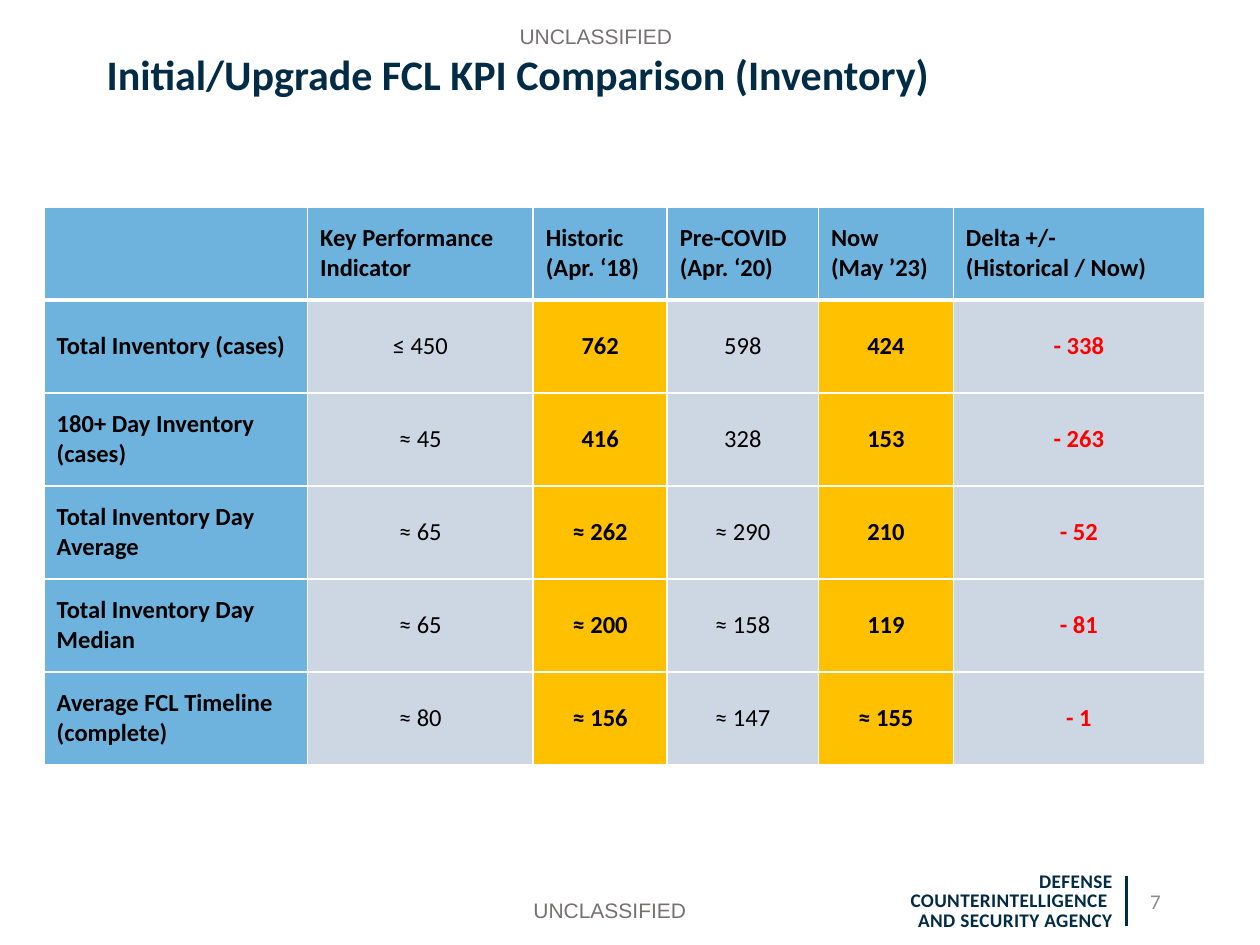
from dataclasses import dataclass

from lxml.etree import SubElement
from pptx import Presentation
from pptx.dml.color import RGBColor
from pptx.enum.shapes import MSO_CONNECTOR
from pptx.enum.text import MSO_ANCHOR, PP_ALIGN
from pptx.oxml.ns import qn
from pptx.util import Cm, Pt

TITLE = "Initial/Upgrade FCL KPI Comparison (Inventory)"
MARKING = "UNCLASSIFIED"
AGENCY = "DEFENSE COUNTERINTELLIGENCE \vAND SECURITY AGENCY"
PAGE_NUMBER = "7"

HEADER = ["", "Key Performance Indicator", "Historic\n(Apr. ‘18)", "Pre-COVID (Apr. ‘20)",
          "Now\n(May ’23)", "Delta +/-\n(Historical / Now)"]
ROWS = [
    ["Total Inventory (cases)", "≤ 450", "762", "598", "424", "- 338"],
    ["180+ Day Inventory (cases)", "≈ 45", "416", "328", "153", "- 263"],
    ["Total Inventory Day Average", "≈ 65", "≈ 262", "≈ 290", "210", "- 52"],
    ["Total Inventory Day Median", "≈ 65", "≈ 200", "≈ 158", "119", "- 81"],
    ["Average FCL Timeline (complete)", "≈ 80", "≈ 156", "≈ 147", "≈ 155", "- 1"],
]
COLUMN_WIDTHS = [5.31, 4.55, 2.7, 3.05, 2.72, 5.06]
ROW_HEIGHT = 1.875
HIGHLIGHT_COLUMNS = (2, 4)
DELTA_COLUMN = 5


@dataclass(frozen=True)
class Theme:
    font: str = "Calibri"
    marking_font: str = "Arial"
    navy: str = "022B46"
    blue: str = "6DB3DE"
    pale: str = "CDD7E3"
    gold: str = "FFC000"
    red: str = "FF0000"
    black: str = "000000"
    white: str = "FFFFFF"
    marking_gray: str = "767171"
    number_gray: str = "8C8C8C"
    title_size: int = 24
    table_size: int = 14
    small_size: int = 12
    agency_size: int = 11


THEME = Theme()


def style(para, size, color, bold=False, align=PP_ALIGN.LEFT, font=THEME.font):
    para.alignment = align
    para.font.name = font
    para.font.size = Pt(size)
    para.font.bold = bold
    para.font.color.rgb = RGBColor.from_string(color)


def add_text(page, text, area, size, color, anchor=MSO_ANCHOR.TOP, **options):
    box = page.shapes.add_textbox(*map(Cm, area))
    frame = box.text_frame
    frame.word_wrap = True
    frame.vertical_anchor = anchor
    para = frame.paragraphs[0]
    para.text = text
    style(para, size, color, **options)
    return para


def add_borders(cell, is_header):
    properties = cell._tc.get_or_add_tcPr()
    for side in ("lnL", "lnR", "lnT", "lnB"):
        width = 3 if is_header and side == "lnB" else 1
        line = SubElement(properties, qn(f"a:{side}"), w=str(Pt(width)))
        fill = SubElement(line, qn("a:solidFill"))
        SubElement(fill, qn("a:srgbClr"), val=THEME.white)


def fill_cell(cell, text, row, column):
    is_label = row == 0 or column == 0
    is_highlight = column in HIGHLIGHT_COLUMNS
    is_delta = column == DELTA_COLUMN
    add_borders(cell, row == 0)
    background = THEME.blue if is_label else THEME.gold if is_highlight else THEME.pale
    cell.fill.solid()
    cell.fill.fore_color.rgb = RGBColor.from_string(background)
    cell.vertical_anchor = MSO_ANCHOR.MIDDLE
    cell.text = text
    for para in cell.text_frame.paragraphs:
        style(para, THEME.table_size,
              THEME.red if is_delta and not is_label else THEME.black,
              bold=is_label or is_highlight or is_delta,
              align=PP_ALIGN.LEFT if is_label else PP_ALIGN.CENTER)


def add_kpi_table(page):
    content = [HEADER, *ROWS]
    table = page.shapes.add_table(
        len(content), len(HEADER), Cm(0.89), Cm(4.17),
        Cm(sum(COLUMN_WIDTHS)), Cm(ROW_HEIGHT * len(content))).table
    for column, width in zip(table.columns, COLUMN_WIDTHS):
        column.width = Cm(width)
    for row, texts in enumerate(content):
        table.rows[row].height = Cm(ROW_HEIGHT)
        for column, text in enumerate(texts):
            fill_cell(table.cell(row, column), text, row, column)


def add_footer(page):
    divider = page.shapes.add_connector(
        MSO_CONNECTOR.STRAIGHT, Cm(22.71), Cm(17.65), Cm(22.71), Cm(18.67))
    divider.line.color.rgb = RGBColor.from_string(THEME.navy)
    divider.line.width = Pt(1.5)
    SubElement(divider._element.spPr, qn("a:effectLst"))

    agency = add_text(page, AGENCY, (17.35, 17.48, 5.33, 1.45), THEME.agency_size,
                      THEME.navy, bold=True, align=PP_ALIGN.RIGHT)
    agency.line_spacing = Pt(11)
    for span in agency.runs:
        span._r.get_or_add_rPr().set("spc", "20")
    add_text(page, PAGE_NUMBER, (17.93, 17.65, 5.72, 1.02), THEME.small_size,
             THEME.number_gray, anchor=MSO_ANCHOR.MIDDLE, align=PP_ALIGN.RIGHT)


def main():
    deck = Presentation()
    deck.slide_width, deck.slide_height = Cm(25.4), Cm(19.05)
    page = deck.slides.add_slide(deck.slide_layouts[6])

    title = add_text(page, TITLE, (1.9, 0.38, 20.55, 2.08), THEME.title_size,
                     THEME.navy, bold=True)
    title.line_spacing = Pt(42)
    add_kpi_table(page)
    add_footer(page)
    for left, top in ((8.66, 0.36), (8.94, 17.96)):
        add_text(page, MARKING, (left, top, 6.71, 0.76), THEME.small_size,
                 THEME.marking_gray, align=PP_ALIGN.CENTER, font=THEME.marking_font)
    deck.save("out.pptx")


if __name__ == "__main__":
    main()
